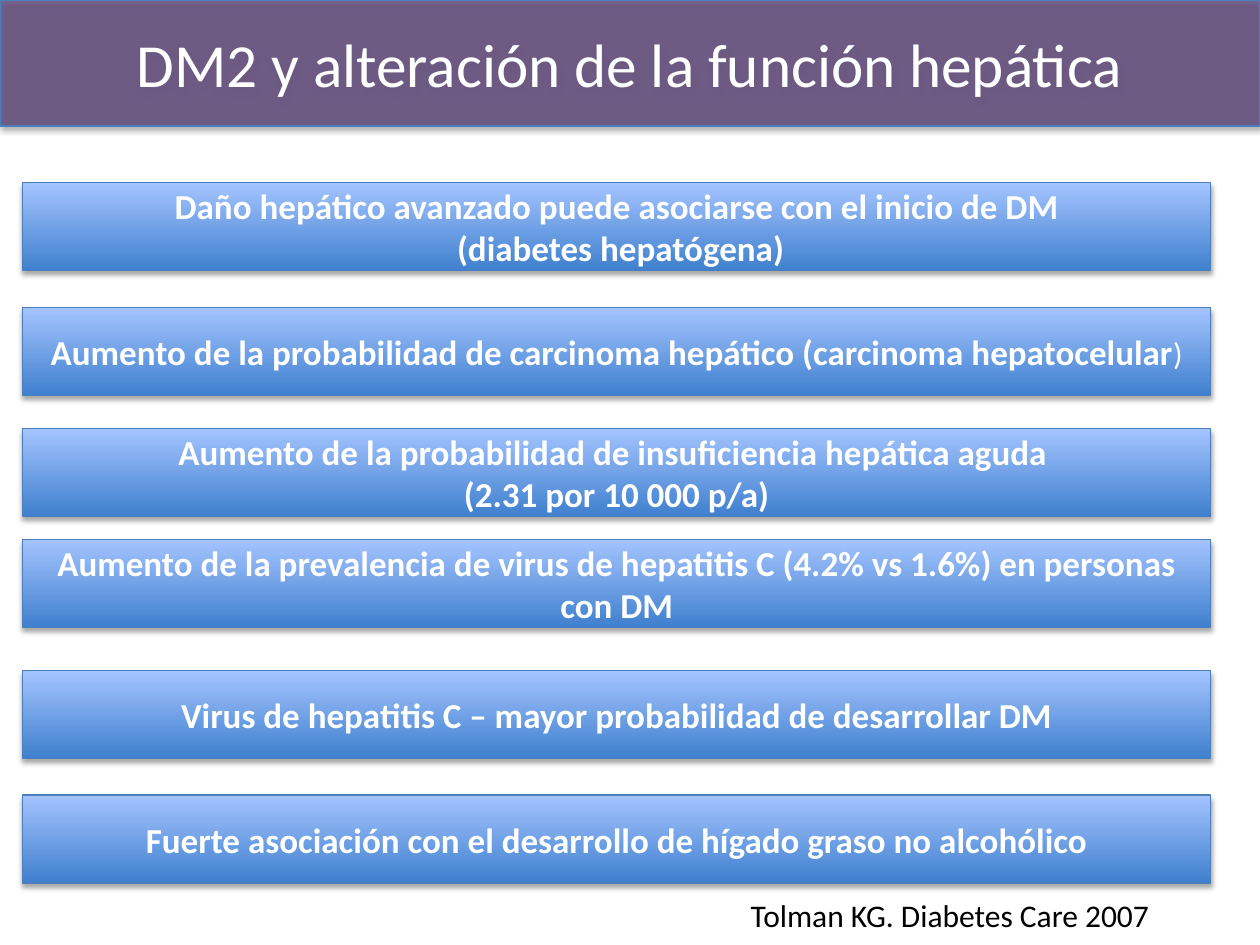
from lxml import etree
from pptx import Presentation
from pptx.dml.color import RGBColor
from pptx.enum.shapes import MSO_SHAPE
from pptx.enum.text import MSO_ANCHOR, PP_ALIGN
from pptx.oxml.ns import qn
from pptx.util import Inches, Pt

RECTANGLE = MSO_SHAPE.RECTANGLE
MIDDLE = MSO_ANCHOR.MIDDLE
CENTER = PP_ALIGN.CENTER

COLORS = {
    "header": "604A7B",
    "border": "4B7EBC",
    "bar_bottom": "3F80CE",
    "bar_top": "A4C4FF",
    "light": "FFFFFF",
    "dark": "000000",
}

TITLE_FORMAT = {"size": Pt(35), "name": "Calibri", "bold": False}
BAR_FORMAT = {"size": Pt(20), "name": "Calibri", "bold": True}
SMALL_FORMAT = {"size": Pt(18), "name": "Calibri", "bold": False}

TITLE = "DM2 y alteración de la función hepática"
CITATION = "Tolman KG. Diabetes Care 2007"
FINDINGS = [
    (1.45, [
        [("Daño hepático avanzado puede asociarse con el inicio de DM", BAR_FORMAT)],
        [(" (diabetes hepatógena)", BAR_FORMAT)],
    ]),
    (2.44, [[
        ("Aumento de la probabilidad de carcinoma hepático (carcinoma hepatocelular", BAR_FORMAT),
        (")", SMALL_FORMAT),
    ]]),
    (3.4, [
        [("Aumento de la probabilidad de insuficiencia hepática aguda ", BAR_FORMAT)],
        [("(2.31 por 10 000 p/a)", BAR_FORMAT)],
    ]),
    (4.28, [[("Aumento de la prevalencia de virus de hepatitis C (4.2% vs 1.6%) "
              "en personas con DM", BAR_FORMAT)]]),
    (5.32, [[("Virus de hepatitis C – mayor probabilidad de desarrollar DM", BAR_FORMAT)]]),
    (6.31, [[("Fuerte asociación con el desarrollo de hígado graso no alcohólico", BAR_FORMAT)]]),
]
BAR_LEFT, BAR_WIDTH, BAR_HEIGHT = 0.18, 9.43, 0.7


def rgb(name):
    return RGBColor.from_string(COLORS[name])


def write(box, lines, color):
    frame = box.text_frame
    frame.word_wrap = True
    frame.vertical_anchor = MIDDLE
    for index, line in enumerate(lines):
        para = frame.add_paragraph() if index else frame.paragraphs[0]
        para.alignment = CENTER
        for text, formats in line:
            span = para.add_run()
            span.text = text
            span.font.color.rgb = rgb(color)
            for key, value in formats.items():
                setattr(span.font, key, value)


def add_shadow(box):
    box.shadow.inherit = False
    effects = box._element.spPr.find(qn("a:effectLst"))
    shadow = etree.SubElement(effects, qn("a:outerShdw"), blurRad=str(Pt(3.1)),
                              dist=str(Pt(1.8)), dir="5400000", rotWithShape="0")
    color = etree.SubElement(shadow, qn("a:srgbClr"), val=COLORS["dark"])
    etree.SubElement(color, qn("a:alpha"), val="35000")


def add_panel(page, left, top, width, height, lines):
    box = page.shapes.add_shape(RECTANGLE, Inches(left), Inches(top),
                                Inches(width), Inches(height))
    box.line.color.rgb = rgb("border")
    box.line.width = Pt(0.75)
    add_shadow(box)
    write(box, lines, "light")
    return box


def main():
    deck = Presentation()
    deck.slide_width, deck.slide_height = Inches(10), Inches(7.5)
    page = deck.slides.add_slide(deck.slide_layouts[6])

    header = add_panel(page, 0, 0, 10, 1, [[(TITLE, TITLE_FORMAT)]])
    header.fill.solid()
    header.fill.fore_color.rgb = rgb("header")
    header_color = header._element.spPr.find(qn("a:solidFill")).find(qn("a:srgbClr"))
    etree.SubElement(header_color, qn("a:alpha"), val="84000")

    for top, lines in FINDINGS:
        bar = add_panel(page, BAR_LEFT, top, BAR_WIDTH, BAR_HEIGHT, lines)
        bar.fill.gradient()
        bar.fill.gradient_angle = 90
        for stop, name in zip(bar.fill.gradient_stops, ("bar_bottom", "bar_top")):
            stop.color.rgb = rgb(name)

    citation = page.shapes.add_textbox(Inches(5.32), Inches(7), Inches(4.44), Inches(0.53))
    write(citation, [[(CITATION, SMALL_FORMAT)]], "dark")

    deck.save("out.pptx")


if __name__ == "__main__":
    main()
